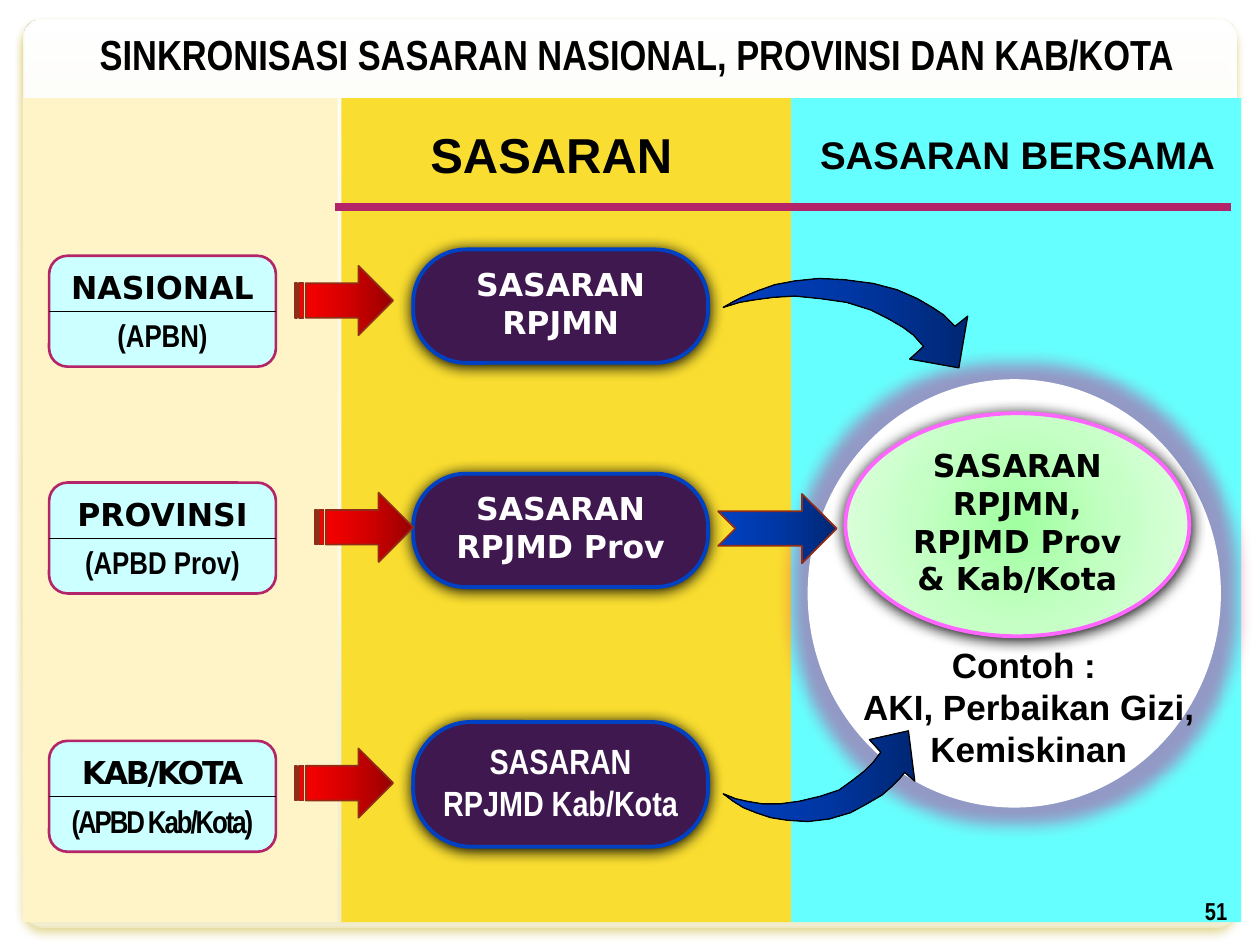
from dataclasses import dataclass

from lxml import etree
from pptx import Presentation
from pptx.dml.color import RGBColor
from pptx.enum.shapes import MSO_CONNECTOR, MSO_SHAPE
from pptx.enum.text import MSO_ANCHOR, MSO_AUTO_SIZE, PP_ALIGN
from pptx.oxml.ns import qn
from pptx.util import Inches, Pt

RECT, ROUND, OVAL = MSO_SHAPE.RECTANGLE, MSO_SHAPE.ROUNDED_RECTANGLE, MSO_SHAPE.OVAL
STRIPED, NOTCHED = MSO_SHAPE.STRIPED_RIGHT_ARROW, MSO_SHAPE.NOTCHED_RIGHT_ARROW
LEFT, CENTER, RIGHT = PP_ALIGN.LEFT, PP_ALIGN.CENTER, PP_ALIGN.RIGHT
TOP, MIDDLE, BOTTOM = MSO_ANCHOR.TOP, MSO_ANCHOR.MIDDLE, MSO_ANCHOR.BOTTOM
SANS, NARROW, WIDE = "Arial", "Arial Narrow", "DejaVu Sans"

COLORS = {
    "black": "000000", "white": "FFFFFF", "cream": "FEF4C7", "yellow": "F9DD30",
    "cyan": "66FFFF", "pale": "CCFFFF", "magenta": "B42469", "purple": "3E184E",
    "blue": "0041C4", "pink": "FF66FF", "brown": "912D17", "gold": "C5AF25",
    "glow": "D6006E",
}
# Gradient stops: position, colour, opacity (all in percent)
PANEL_STOPS = [(0, "FFFFFF", 100), (35, "FFFFFF", 87), (50, "FFFFFF", 92),
               (60, "FFFFFF", 89), (100, "FFFFFF", 55)]
RED_STOPS = [(0, "970000", 100), (50, "D70000", 100), (100, "FF0000", 100)]
BLUE_STOPS = [(0, "002774", 100), (50, "0037A5", 100), (100, "0041C4", 100)]
GREEN_STOPS = [(0, "A0FFA0", 100), (50, "C5FFC5", 100), (100, "E3FFE3", 100)]

# Curved arrows: upper edge, head and lower edge in slide inches
TOP_ARROW = [
    (5.74, 2.44), (5.81, 2.4), (5.89, 2.36), (6.01, 2.31), (6.15, 2.26), (6.31, 2.23),
    (6.5, 2.21), (6.7, 2.22), (6.93, 2.25), (7.12, 2.3), (7.28, 2.37), (7.4, 2.44),
    (7.49, 2.5), (7.58, 2.59), (7.68, 2.51), (7.61, 2.92), (7.22, 2.85), (7.33, 2.75),
    (7.25, 2.66), (7.17, 2.6), (7.05, 2.53), (6.91, 2.46), (6.72, 2.4), (6.51, 2.37),
    (6.31, 2.35), (6.14, 2.36), (5.99, 2.38), (5.87, 2.4)]
BOTTOM_ARROW = [
    (5.74, 6.3), (5.82, 6.36), (5.9, 6.41), (6, 6.45), (6.12, 6.49), (6.25, 6.51),
    (6.41, 6.52), (6.58, 6.5), (6.75, 6.45), (6.88, 6.38), (7, 6.31), (7.08, 6.24),
    (7.14, 6.18), (7.18, 6.13), (7.26, 6.2), (7.21, 5.8), (6.9, 5.87), (6.99, 5.97),
    (6.93, 6.05), (6.86, 6.12), (6.77, 6.19), (6.66, 6.27), (6.51, 6.32), (6.34, 6.36),
    (6.19, 6.38), (6.05, 6.38), (5.93, 6.36), (5.84, 6.34)]


@dataclass
class Line:
    text: str
    size: float = 18
    font: str = WIDE
    color: str = "black"
    spacing: float = 0
    before: float = 0


@dataclass
class Level:
    top: float
    lines: list[Line]
    arrow_at: tuple[float, float]
    target_top: float
    target_height: float
    target_lines: list[Line]


LEVELS = [
    Level(2.03, [Line("NASIONAL"), Line("(APBN)", font=NARROW, before=6)], (2.34, 2.11),
          1.98, 0.9, [Line(t, color="white") for t in ("SASARAN", "RPJMN")]),
    Level(3.83, [Line("PROVINSI"), Line("(APBD Prov)", font=NARROW, before=6)], (2.5, 3.91),
          3.76, 0.9, [Line(t, color="white") for t in ("SASARAN", "RPJMD Prov")]),
    Level(5.88, [Line("KAB/KOTA", spacing=-1.3),
                 Line("(APBD Kab/Kota)", font=NARROW, spacing=-1.2, before=6)], (2.34, 5.94),
          5.73, 0.99, [Line(t, 20, NARROW, "white") for t in ("SASARAN", "RPJMD Kab/Kota")]),
]


def rgb(name: str) -> RGBColor:
    return RGBColor.from_string(COLORS[name])


def add_color(parent, value: str, opacity: float) -> None:
    clr = etree.SubElement(parent, qn("a:srgbClr"), val=value)
    etree.SubElement(clr, qn("a:alpha"), val=str(int(opacity * 1000)))


def set_gradient(sp, stops: list, angle: float | None) -> None:
    """Fill along an angle, or outward from the centre when angle is None."""
    sp.fill.solid()
    solid = sp.element.spPr.find(qn("a:solidFill"))
    grad = etree.Element(qn("a:gradFill"), rotWithShape="1")
    stop_list = etree.SubElement(grad, qn("a:gsLst"))
    for pos, value, opacity in stops:
        add_color(etree.SubElement(stop_list, qn("a:gs"), pos=str(pos * 1000)), value, opacity)
    if angle is None:
        path = etree.SubElement(grad, qn("a:path"), path="circle")
        etree.SubElement(path, qn("a:fillToRect"), l="50000", t="50000", r="50000", b="50000")
    else:
        etree.SubElement(grad, qn("a:lin"), ang=str(int(angle * 60000)), scaled="0")
    solid.getparent().replace(solid, grad)


def add_effect(sp, tag: str, color: str, opacity: float, **attrs: str) -> None:
    effects = sp.element.spPr.find(qn("a:effectLst"))
    add_color(etree.SubElement(effects, qn(tag), **attrs), COLORS[color], opacity)


def add_shadow(sp, color: str = "black", opacity: float = 100,
               blur: float = 8.5, dist: float = 1) -> None:
    add_effect(sp, "a:outerShdw", color, opacity, blurRad=str(Pt(blur)), dist=str(Pt(dist)),
               dir="5400000", algn="ctr", rotWithShape="0")


def style(sp, fill: str | None, line: str | None, width: float) -> None:
    sp.shadow.inherit = False
    if fill:
        sp.fill.solid()
        sp.fill.fore_color.rgb = rgb(fill)
    if line:
        sp.line.color.rgb = rgb(line)
        sp.line.width = Pt(width)
    else:
        sp.line.fill.background()


def draw_shape(s, kind, box: tuple, fill: str | None = None, line: str | None = None,
               width: float = 1, adj: float | None = None):
    sp = s.shapes.add_shape(kind, *map(Inches, box))
    if adj is not None:
        sp.adjustments[0] = adj
    style(sp, fill, line, width)
    return sp


def write(sp, lines: list[Line], align=CENTER, anchor=MIDDLE,
          insets: tuple = (0.04, 0, 0.04, 0.05), grow: bool = True) -> None:
    tf = sp.text_frame
    sides = ("margin_left", "margin_top", "margin_right", "margin_bottom")
    frame = dict(zip(sides, map(Inches, insets)), word_wrap=True, vertical_anchor=anchor,
                 auto_size=MSO_AUTO_SIZE.SHAPE_TO_FIT_TEXT if grow else MSO_AUTO_SIZE.NONE)
    for name, value in frame.items():
        setattr(tf, name, value)
    for i, line in enumerate(lines):
        p = tf.add_paragraph() if i else tf.paragraphs[0]
        p.alignment, p.space_before = align, Pt(line.before)
        r = p.add_run()
        r.text = line.text
        for name, value in {"size": Pt(line.size), "name": line.font, "bold": True}.items():
            setattr(r.font, name, value)
        r.font.color.rgb = rgb(line.color)
        if line.spacing:
            r.font._element.set("spc", str(int(line.spacing * 100)))


def draw_text(s, box: tuple, lines: list[Line], align=CENTER, anchor=TOP,
              grow: bool = True) -> None:
    sp = s.shapes.add_textbox(*map(Inches, box))
    write(sp, lines, align, anchor, (0.1, 0.05, 0.1, 0.05), grow)


def draw_rule(s, left: float, right: float, y: float, color: str, width: float) -> None:
    cx = s.shapes.add_connector(MSO_CONNECTOR.STRAIGHT, *map(Inches, (left, y, right, y)))
    cx.line.color.rgb, cx.line.width = rgb(color), Pt(width)
    etree.SubElement(cx.element.spPr, qn("a:effectLst"))


def draw_curve(s, points: list) -> None:
    start, *rest = [(Inches(x), Inches(y)) for x, y in points]
    builder = s.shapes.build_freeform(*start)
    builder.add_line_segments(rest, close=True)
    sp = builder.convert_to_shape()
    style(sp, None, "black", 0)
    set_gradient(sp, BLUE_STOPS, 180)


def main() -> None:
    prs = Presentation()
    prs.slide_width, prs.slide_height = Inches(10), Inches(7.5)
    s = prs.slides.add_slide(prs.slide_layouts[5])

    # Panel and columns
    panel = draw_shape(s, ROUND, (0.19, 0.16, 9.62, 7.2), adj=0.022)
    set_gradient(panel, PANEL_STOPS, 90)
    add_shadow(panel, "gold", 90, 5, 3.6)
    for left, width, fill in ((0.18, 2.5, "cream"), (2.71, 3.57, "yellow"), (6.28, 3.57, "cyan")):
        draw_shape(s, RECT, (left, 0.78, width, 6.54), fill)
    circle = draw_shape(s, OVAL, (6.41, 3.01, 3.28, 3.4), "white")
    add_effect(circle, "a:glow", "glow", 40, rad=str(Pt(18)))

    # Title and column headings
    title = s.shapes.title
    title.left, title.top, title.width, title.height = map(Inches, (0.29, 0.18, 9.53, 0.5))
    write(title, [Line("SINKRONISASI SASARAN NASIONAL, PROVINSI DAN KAB/KOTA", 24, NARROW)],
          anchor=TOP, insets=(0.1, 0.05, 0.1, 0.05))
    s.shapes.element.append(title.element)
    draw_text(s, (2.97, 0.94, 2.81, 0.57), [Line("SASARAN", 28, SANS)])
    draw_text(s, (6.41, 0.99, 3.52, 0.47), [Line("SASARAN BERSAMA", 22, SANS)], LEFT)
    draw_rule(s, 2.66, 9.77, 1.64, "magenta", 4.5)

    # Levels of government with their targets
    for level in LEVELS:
        box = draw_shape(s, ROUND, (0.39, level.top, 1.8, 0.88), "pale", "magenta", 1.5)
        write(box, level.lines, insets=(0.04, 0.05, 0.04, 0.05))
        draw_rule(s, 0.39, 2.19, level.top + 0.44, "black", 0.39)
        target = draw_shape(s, ROUND, (3.28, level.target_top, 2.34, level.target_height),
                            "purple", "blue", 2.21, 0.466)
        add_shadow(target)
        write(target, level.target_lines)
        arrow = draw_shape(s, STRIPED, (*level.arrow_at, 0.78, 0.55), line="brown")
        set_gradient(arrow, RED_STOPS, 180)

    # Shared target
    shared = draw_shape(s, OVAL, (6.71, 3.28, 2.73, 1.77), line="pink", width=2.21)
    set_gradient(shared, GREEN_STOPS, None)
    add_shadow(shared)
    write(shared, [Line("SASARAN RPJMN, RPJMD Prov & Kab/Kota")])
    draw_curve(s, BOTTOM_ARROW)
    arrow = draw_shape(s, NOTCHED, (5.7, 3.92, 0.94, 0.55), line="brown")
    set_gradient(arrow, BLUE_STOPS, 180)
    draw_text(s, (6.72, 5.06, 2.89, 1.11),
              [Line("Contoh : ", 20, SANS), Line("AKI, Perbaikan Gizi, Kemiskinan", 20, SANS)])
    draw_curve(s, TOP_ARROW)

    # Page number
    draw_text(s, (7.51, 6.87, 2.33, 0.52), [Line("51", 14, NARROW)], RIGHT, BOTTOM, False)
    prs.save("out.pptx")


if __name__ == "__main__":
    main()
